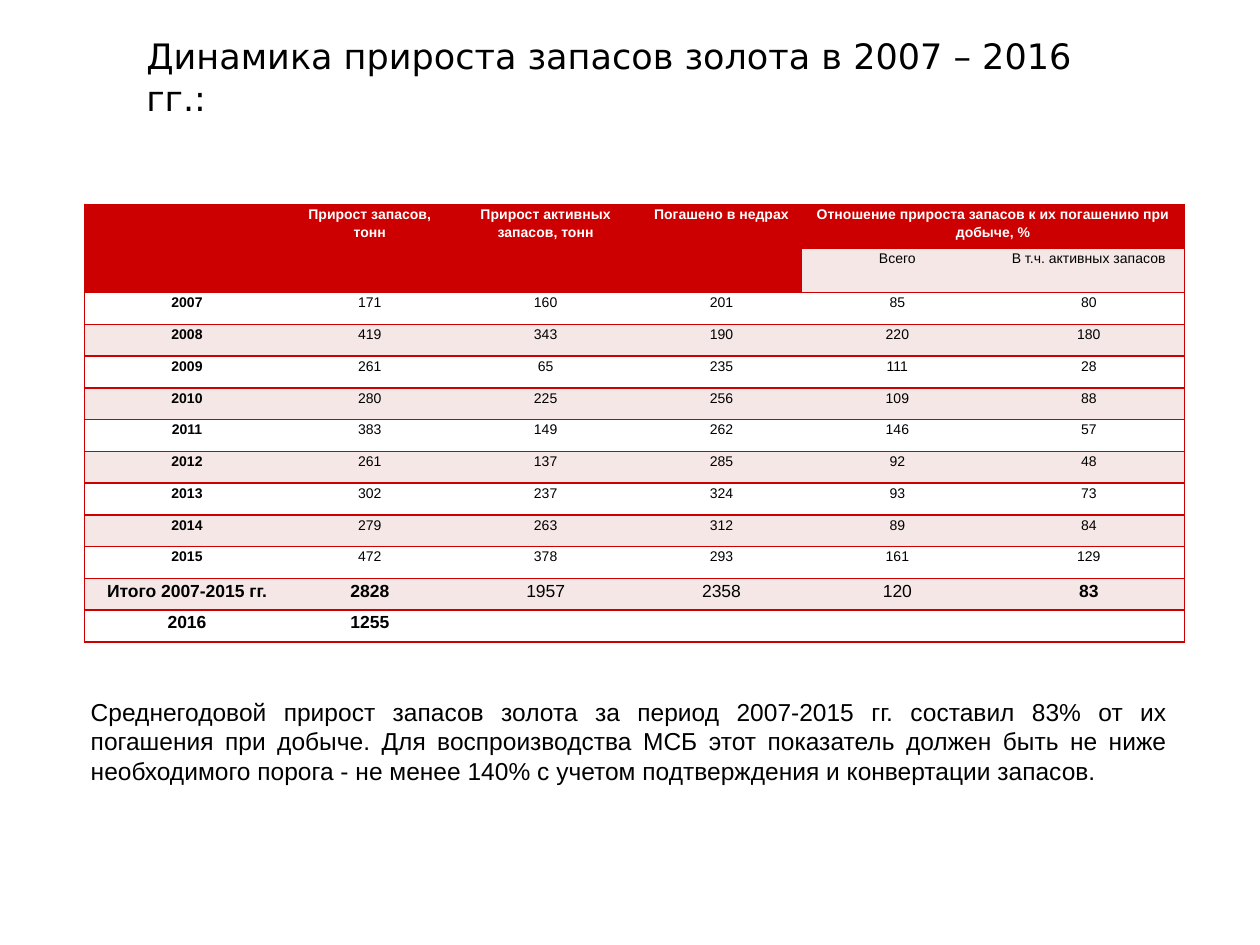
from dataclasses import dataclass

from lxml import etree
from pptx import Presentation
from pptx.dml.color import RGBColor
from pptx.enum.text import MSO_ANCHOR, PP_ALIGN
from pptx.oxml.ns import qn
from pptx.util import Cm, Pt

LEFT, CENTER, JUSTIFY = PP_ALIGN.LEFT, PP_ALIGN.CENTER, PP_ALIGN.JUSTIFY
TOP, BOTTOM = MSO_ANCHOR.TOP, MSO_ANCHOR.BOTTOM
PLAIN_GRID = "{2D5ABB26-0587-4C30-8999-92F81FD0307C}"


@dataclass(frozen=True)
class Theme:
    red: str = "CC0000"
    pink: str = "F6E7E7"
    white: str = "FFFFFF"
    black: str = "000000"
    head: str = "DejaVu Sans"
    body: str = "Arial"
    title: int = 20
    note: int = 14
    total: int = 10
    cell: int = 8
    rule: int = 1


class Page:
    def __init__(self, slide, theme):
        self.slide = slide
        self.theme = theme

    def font(self, para, name, size, color, bold=False):
        font = para.font
        font.name, font.size, font.bold = name, Pt(size), bold
        font.color.rgb = RGBColor.from_string(color)

    def text(self, box, words, name, size, align, anchor=TOP):
        frame = self.slide.shapes.add_textbox(*map(Cm, box)).text_frame
        frame.word_wrap = True
        frame.vertical_anchor = anchor
        para = frame.paragraphs[0]
        para.text = words
        para.alignment = align
        self.font(para, name, size, self.theme.black)

    def table(self, left, top, widths, heights):
        frame = self.slide.shapes.add_table(
            len(heights), len(widths), Cm(left), Cm(top),
            Cm(sum(widths)), Cm(sum(heights)))
        grid = frame.table
        grid.first_row = grid.horz_banding = False
        grid._tbl.tblPr.find(qn("a:tableStyleId")).text = PLAIN_GRID
        for col, width in zip(grid.columns, widths):
            col.width = Cm(width)
        for row, height in zip(grid.rows, heights):
            row.height = Cm(height)
        return grid

    def border(self, cell, sides):
        props = cell._tc.get_or_add_tcPr()
        for side in sides:
            line = etree.SubElement(props, qn(f"a:ln{side}"), w=str(Pt(self.theme.rule)))
            fill = etree.SubElement(line, qn("a:solidFill"))
            etree.SubElement(fill, qn("a:srgbClr"), val=self.theme.red)

    def cell(self, cell, words, fill, sides, size, color, bold):
        cell.margin_left = cell.margin_right = Cm(0.18)
        cell.margin_top = cell.margin_bottom = 0
        self.border(cell, sides)
        cell.fill.solid()
        cell.fill.fore_color.rgb = RGBColor.from_string(fill)
        para = cell.text_frame.paragraphs[0]
        para.alignment = CENTER
        para.line_spacing = 1.15
        self.font(para, self.theme.body, size, color, bold)
        if words:
            para.text = words
        else:  # an empty cell keeps its row low
            etree.SubElement(para._p, qn("a:endParaRPr"), sz=str(size * 100))


# Table content
HEAD = [
    ["", "Прирост запасов, тонн", "Прирост активных запасов, тонн",
     "Погашено в недрах",
     "Отношение прироста запасов к их погашению при добыче, %", ""],
    ["", "", "", "", "Всего", "В т.ч. активных запасов"],
]
YEARS = [
    ["2007", "171", "160", "201", "85", "80"],
    ["2008", "419", "343", "190", "220", "180"],
    ["2009", "261", "65", "235", "111", "28"],
    ["2010", "280", "225", "256", "109", "88"],
    ["2011", "383", "149", "262", "146", "57"],
    ["2012", "261", "137", "285", "92", "48"],
    ["2013", "302", "237", "324", "93", "73"],
    ["2014", "279", "263", "312", "89", "84"],
    ["2015", "472", "378", "293", "161", "129"],
]
TOTALS = [
    ["Итого 2007-2015 гг.", "2828", "1957", "2358", "120", "83"],
    ["2016", "1255", "", "", "", ""],
]
WIDTHS = [4.14, 3.23, 3.86, 3.23, 3.86, 3.86]


def fill_table(page):
    theme = page.theme
    rows = HEAD + YEARS + TOTALS
    first = len(HEAD)
    last = first + len(YEARS)
    grid = page.table(1.7, 4.12, WIDTHS, [0.89] * first + [0.64] * (len(rows) - first))
    end = len(WIDTHS) - 1
    for r, row in enumerate(rows):
        for c, words in enumerate(row):
            head = r == 0 or (r < first and c < 4)
            total = r >= last
            fill = theme.red if head else theme.pink if r % 2 else theme.white
            sides = "L" * (c == 0) + "R" * (c == end) + "TB"
            bold = head or (r >= first and c == 0) or (total and c in (1, end))
            page.cell(grid.cell(r, c), words, fill, sides,
                      theme.total if total else theme.cell,
                      theme.white if head else theme.black, bold)
    for c in range(4):
        grid.cell(0, c).merge(grid.cell(1, c))
    grid.cell(0, 4).merge(grid.cell(0, end))


def main():
    deck = Presentation()
    deck.slide_width, deck.slide_height = Cm(25.4), Cm(19.05)
    theme = Theme()
    page = Page(deck.slides.add_slide(deck.slide_layouts[6]), theme)

    # Title
    page.text((2.7, 1.12, 20.5, 1.4),
              "Динамика прироста запасов золота в 2007 – 2016 гг.:",
              theme.head, theme.title, LEFT, BOTTOM)

    # Yearly figures
    fill_table(page)

    # Conclusion
    page.text((1.58, 13.92, 22.2, 2.06),
              "Среднегодовой прирост запасов золота за период 2007-2015 гг. "
              "составил 83% от их погашения при добыче. Для воспроизводства МСБ "
              "этот показатель должен быть не ниже необходимого порога - не менее "
              "140% с учетом подтверждения и конвертации запасов.",
              theme.body, theme.note, JUSTIFY)

    deck.save("out.pptx")


if __name__ == "__main__":
    main()
